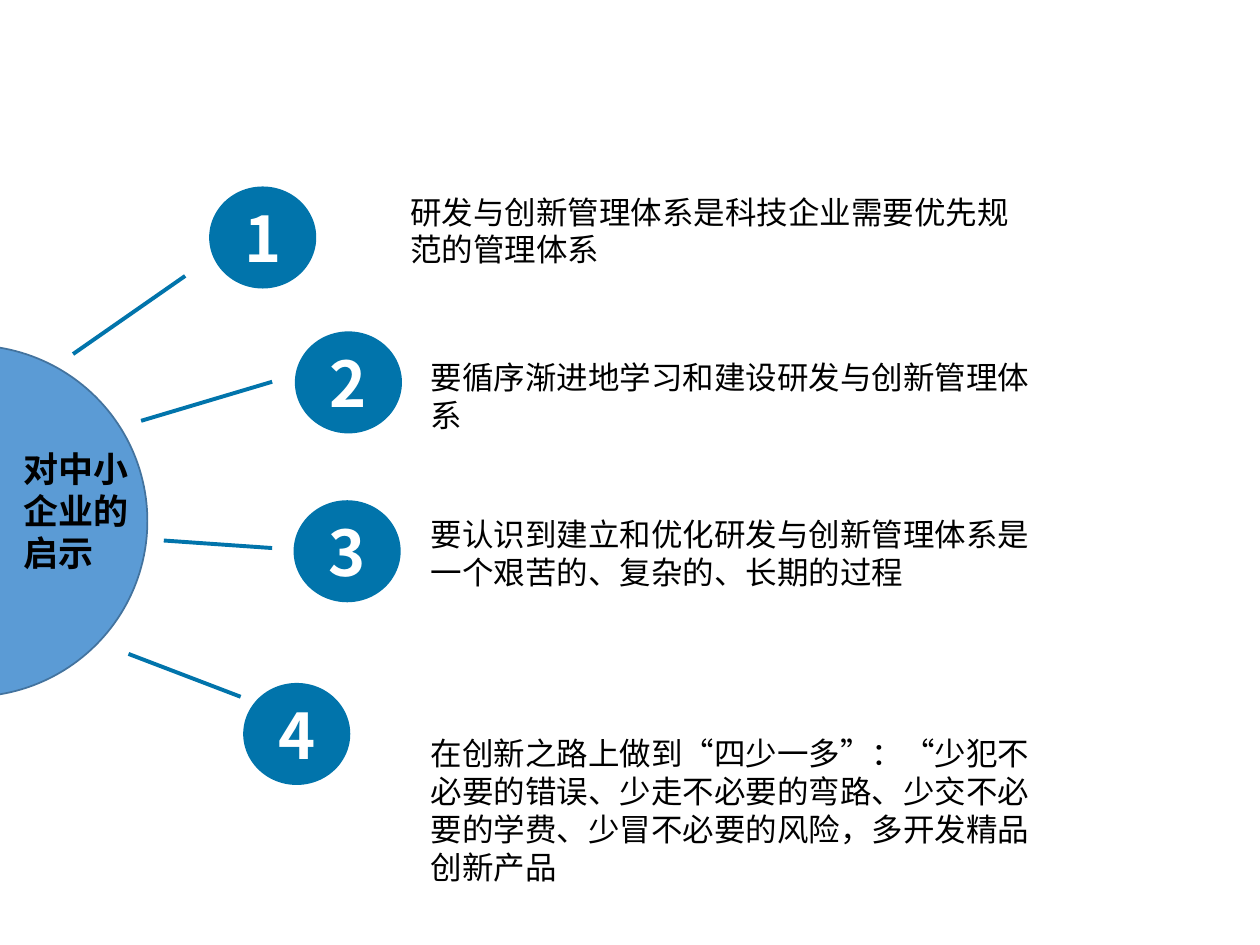
from lxml import etree
from pptx import Presentation
from pptx.dml.color import RGBColor
from pptx.enum.shapes import MSO_CONNECTOR, MSO_SHAPE
from pptx.enum.text import MSO_ANCHOR, MSO_AUTO_SIZE, PP_ALIGN
from pptx.oxml.ns import qn
from pptx.util import Inches, Pt

OVAL = MSO_SHAPE.OVAL
STRAIGHT = MSO_CONNECTOR.STRAIGHT
MIDDLE = MSO_ANCHOR.MIDDLE
CENTER = PP_ALIGN.CENTER
GROW = MSO_AUTO_SIZE.SHAPE_TO_FIT_TEXT

ACCENT = "0174AB"
BADGE_WIDTH, BADGE_HEIGHT = 0.85, 0.81
TEXT_WIDTH = 5

# badge position, spoke start and end, text position and height, wording
POINTS = [
    ((1.66, 1.48), (0.58, 2.81), (1.47, 2.19), (3.16, 1.48), 0.71,
     "研发与创新管理体系是科技企业需要优先规范的管理体系"),
    ((2.34, 2.63), (1.12, 3.34), (2.16, 3.03), (3.32, 2.79), 0.71,
     "要循序渐进地学习和建设研发与创新管理体系"),
    ((2.33, 3.97), (1.3, 4.29), (2.16, 4.35), (3.32, 4.04), 0.71,
     "要认识到建立和优化研发与创新管理体系是一个艰苦的、复杂的、长期的过程"),
    ((1.93, 5.42), (1.02, 5.19), (1.91, 5.53), (3.32, 5.78), 1.31,
     "在创新之路上做到“四少一多”：“少犯不必要的错误、少走不必要的弯路、"
     "少交不必要的学费、少冒不必要的风险，多开发精品创新产品"),
]


def color(value):
    return RGBColor.from_string(value)


def add_text(left, top, width, height, text, size, bold=False):
    box = slide.shapes.add_textbox(Inches(left), Inches(top), Inches(width), Inches(height))
    frame = box.text_frame
    frame.word_wrap = True
    frame.auto_size = GROW
    paragraph = frame.paragraphs[0]
    paragraph.text = text
    paragraph.font.name = "Calibri"
    paragraph.font.size = Pt(size)
    paragraph.font.bold = bold
    paragraph.font.color.rgb = color("000000")


presentation = Presentation()
presentation.slide_width = Inches(10)
presentation.slide_height = Inches(7.5)
slide = presentation.slides.add_slide(presentation.slide_layouts[6])

hub = slide.shapes.add_shape(OVAL, Inches(-1.64), Inches(2.74), Inches(2.81), Inches(2.79))
hub.shadow.inherit = False
hub.fill.solid()
hub.fill.fore_color.rgb = color("5B9BD5")
hub.line.color.rgb = color("43739E")
hub.line.width = Pt(1)
add_text(0.09, 3.5, 1.07, 1.11, "对中小企业的启示", 20, bold=True)

for number, (badge_at, start, end, text_at, text_height, text) in enumerate(POINTS, 1):
    spoke = slide.shapes.add_connector(STRAIGHT, *map(Inches, start + end))
    spoke.line.color.rgb = color(ACCENT)
    spoke.line.width = Pt(2.25)
    etree.SubElement(spoke._element.spPr, qn("a:effectLst"))

    badge = slide.shapes.add_shape(
        OVAL, *map(Inches, badge_at), Inches(BADGE_WIDTH), Inches(BADGE_HEIGHT))
    badge.shadow.inherit = False
    badge.fill.solid()
    badge.fill.fore_color.rgb = color(ACCENT)
    badge.line.fill.background()
    frame = badge.text_frame
    frame.vertical_anchor = MIDDLE
    frame.margin_left = frame.margin_right = frame.margin_top = frame.margin_bottom = 0
    paragraph = frame.paragraphs[0]
    paragraph.text = str(number)
    paragraph.alignment = CENTER
    paragraph.font.name = "Noto Sans CJK SC"
    paragraph.font.size = Pt(36)
    paragraph.font.bold = True
    paragraph.font.color.rgb = color("FFFFFF")

    add_text(*text_at, TEXT_WIDTH, text_height, text, 18)

presentation.save("out.pptx")
